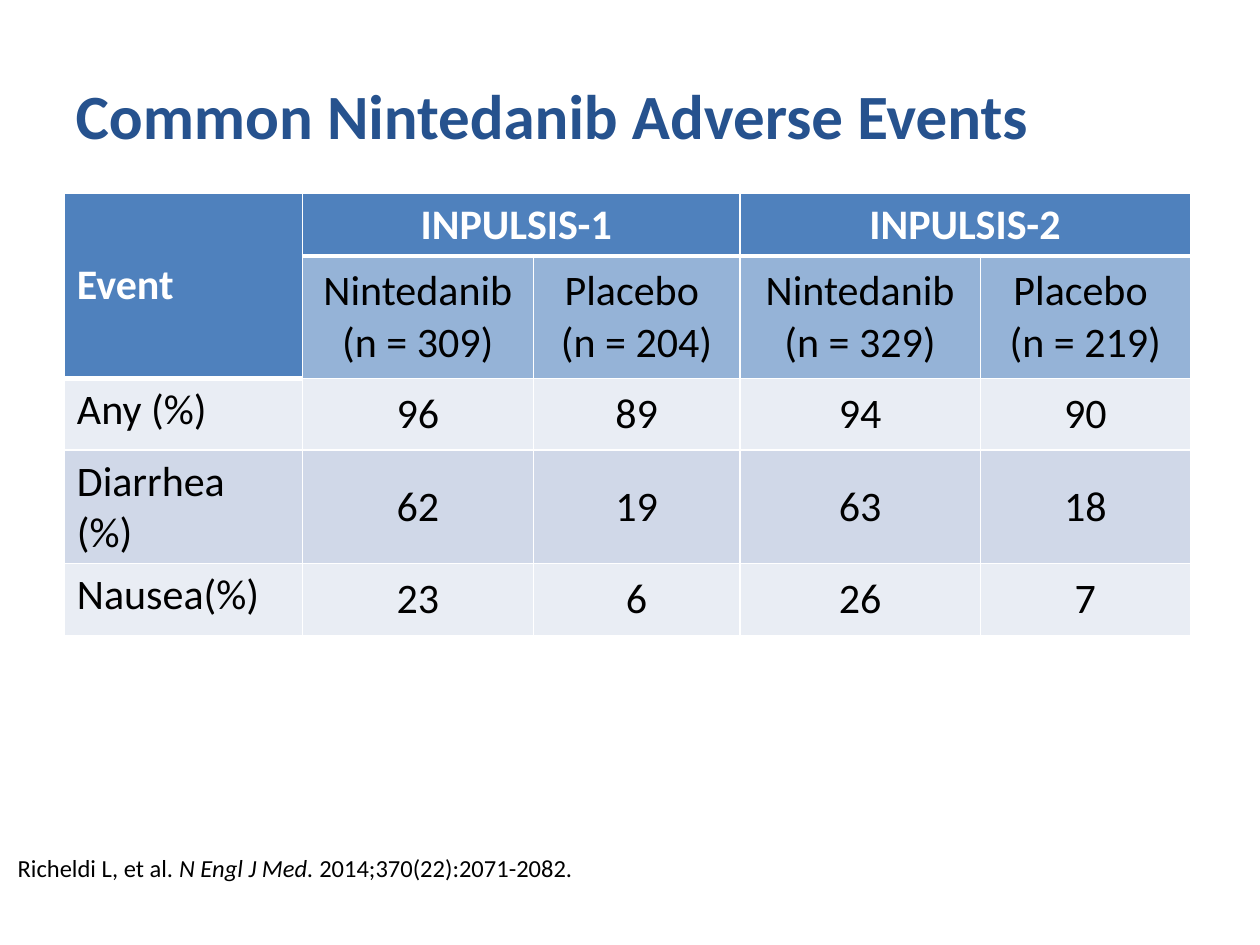
import pptx
import pptx.util
import pptx.dml.color
import pptx.enum.text
import pptx.oxml
import pptx.oxml.ns

Pt = pptx.util.Pt
RGBColor = pptx.dml.color.RGBColor
ALIGN = pptx.enum.text.PP_ALIGN
ANCHOR = pptx.enum.text.MSO_ANCHOR

# Content
TITLE = "Common Nintedanib Adverse Events"
CITATION = [("Richeldi L, et al. ", False), ("N Engl J Med. ", True),
            ("2014;370(22):2071-2082.", False)]
ROWS = [
    ["Event", "INPULSIS-1 ", "", "INPULSIS-2", ""],
    ["", "Nintedanib (n = 309)", "Placebo \n(n = 204)",
     "Nintedanib (n = 329)", "Placebo \n(n = 219)"],
    ["Any (%)", "96", "89", "94", "90"],
    ["Diarrhea (%)", "62", "19", "63", "18"],
    ["Nausea(%)", "23", "6", "26", "7"],
]
MERGES = [((0, 0), (1, 0)), ((0, 1), (0, 2)), ((0, 3), (0, 4))]

# Layout, in points
COLUMN_WIDTHS = [136, 132, 118, 137.5, 120]
ROW_HEIGHTS = [36, 70, 41, 41, 41]

# Colours
NAVY = RGBColor(0x26, 0x52, 0x8E)
BLUE = RGBColor(0x4F, 0x81, 0xBD)
LIGHT_BLUE = RGBColor(0x95, 0xB3, 0xD7)
BAND_LIGHT = RGBColor(0xE9, 0xED, 0xF4)
BAND_DARK = RGBColor(0xD0, 0xD8, 0xE8)
WHITE = RGBColor(0xFF, 0xFF, 0xFF)
BLACK = RGBColor(0, 0, 0)
ROW_FILLS = [BLUE, LIGHT_BLUE, BAND_LIGHT, BAND_DARK, BAND_LIGHT]


def write(frame, text, size, color, bold=False, align=ALIGN.LEFT):
    """Fill a frame with text: a string, or a list of (words, italic) runs."""
    runs_by_line = ([[(line, False)] for line in text.split("\n")]
                    if isinstance(text, str) else [text])
    for index, runs in enumerate(runs_by_line):
        paragraph = frame.paragraphs[0] if index == 0 else frame.add_paragraph()
        paragraph.alignment = align
        for words, italic in runs:
            run = paragraph.add_run()
            run.text = words
            run.font.name = "Calibri"
            run.font.size = Pt(size)
            run.font.bold = bold
            run.font.italic = italic
            run.font.color.rgb = color


def set_borders(cell, bottom):
    """Draw white cell borders, 1 pt except for the bottom one."""
    properties = cell._tc.get_or_add_tcPr()
    widths = {"lnL": 1, "lnR": 1, "lnT": 1, "lnB": bottom}
    for position, (tag, width) in enumerate(widths.items()):
        properties.insert(position, pptx.oxml.parse_xml(
            f'<a:{tag} {pptx.oxml.ns.nsdecls("a")} w="{Pt(width)}">'
            f'<a:solidFill><a:srgbClr val="{WHITE}"/></a:solidFill></a:{tag}>'))


presentation = pptx.Presentation()
presentation.slide_width, presentation.slide_height = Pt(720), Pt(540)
slide = presentation.slides.add_slide(presentation.slide_layouts[5])

# Title
title = slide.shapes.title
title.left, title.top, title.width, title.height = Pt(36), Pt(43.2), Pt(648), Pt(44.6)
title.text_frame.auto_size = pptx.enum.text.MSO_AUTO_SIZE.NONE
title.text_frame.vertical_anchor = ANCHOR.MIDDLE
write(title.text_frame, TITLE, size=36, color=NAVY, bold=True)

# Citation
citation = slide.shapes.add_textbox(Pt(3), Pt(484), Pt(335), Pt(24.5))
citation.text_frame.word_wrap = False
write(citation.text_frame, CITATION, size=14, color=BLACK)

# Adverse event table
table = slide.shapes.add_table(
    len(ROWS), len(COLUMN_WIDTHS), Pt(36.8), Pt(110.2),
    Pt(sum(COLUMN_WIDTHS)), Pt(sum(ROW_HEIGHTS))).table
for column, width in zip(table.columns, COLUMN_WIDTHS):
    column.width = Pt(width)
for row, height in zip(table.rows, ROW_HEIGHTS):
    row.height = Pt(height)
for first, last in MERGES:
    table.cell(*first).merge(table.cell(*last))

for row_index, texts in enumerate(ROWS):
    for column_index, text in enumerate(texts):
        cell = table.cell(row_index, column_index)
        heading = row_index == 0 or cell.is_spanned
        cell.fill.solid()
        cell.fill.fore_color.rgb = BLUE if heading else ROW_FILLS[row_index]
        set_borders(cell, bottom=3 if heading else 1)
        if cell.is_spanned:
            continue
        top_anchored = (row_index == 0) != (column_index == 0)
        if row_index == 1:
            top_anchored = False
        cell.vertical_anchor = ANCHOR.TOP if top_anchored else ANCHOR.MIDDLE
        write(cell.text_frame, text, size=24, bold=heading,
              color=WHITE if heading else BLACK,
              align=ALIGN.CENTER if column_index else ALIGN.LEFT)

presentation.save("out.pptx")
